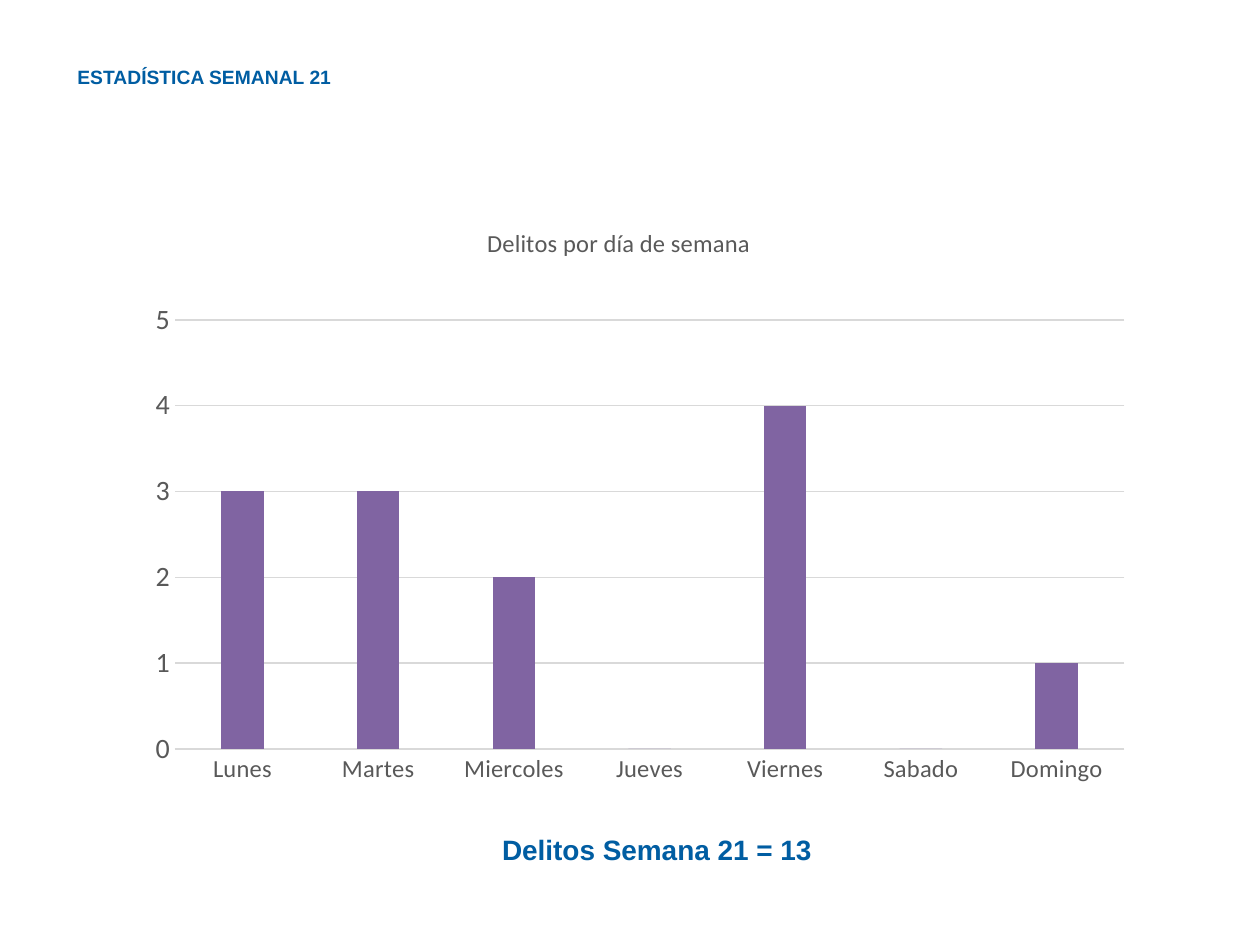
from lxml import etree
from pptx import Presentation
from pptx import util as u
from pptx.chart.data import CategoryChartData
from pptx.dml.color import RGBColor
from pptx.enum import chart as ch, text
from pptx.oxml.ns import qn

BLUE, GREY, RULE = "005DA2", "595959", "D9D9D9"
DAYS = ["Lunes", "Martes", "Miercoles", "Jueves", "Viernes", "Sabado", "Domingo"]
SERIES = [("Series 1", [], "4F81BD"), ("Series 2", [], "C0504D"),
          ("Series 3", [], "9BBB59"),
          ("Series 4", [3, 3, 2, 0, 4, 0, 1], "8064A2")]


def px(n):
    return u.Emu(round(n * 914400 / 126))


def paint(color, code):
    color.rgb = RGBColor.from_string(code)


def style(font, name, size, code, bold=False):
    font.name, font.size, font.bold = name, u.Pt(size), bold
    paint(font.color, code)


def rule(line):
    line.width = u.Pt(0.75)
    paint(line.color, RULE)


def label(slide, box, words, size, align):
    frame = slide.shapes.add_textbox(*map(px, box)).text_frame
    frame.word_wrap = True
    frame.vertical_anchor = text.MSO_ANCHOR.MIDDLE
    par = frame.paragraphs[0]
    par.text, par.alignment = words, align
    style(par.font, "Arial", size, BLUE, True)


def place(parent, index, **parts):
    """Give a chart part a manual layout, in shares of the chart."""
    for old in parent.findall(qn("c:layout")):
        parent.remove(old)
    layout = etree.Element(qn("c:layout"))
    manual = etree.SubElement(layout, qn("c:manualLayout"))
    for tag, val in parts.items():
        etree.SubElement(manual, qn("c:" + tag)).set("val", str(val))
    parent.insert(index, layout)


def columns(slide, box):
    data = CategoryChartData()
    data.categories = DAYS
    for name, vals, _ in SERIES:
        data.add_series(name, vals)
    kind = ch.XL_CHART_TYPE.COLUMN_CLUSTERED
    chart = slide.shapes.add_chart(kind, *map(px, box), data).chart
    style(chart.font, "Calibri", 10, "000000")
    chart.has_legend = False

    # Title
    chart.has_title = True
    title = chart.chart_title
    par = title.text_frame.paragraphs[0]
    par.text = "Delitos por día de semana"
    style(par.font, "Calibri", 14, GREY)
    title.include_in_layout = False
    place(title._element, 1, xMode="edge", yMode="edge", x=0.37, y=0.03)

    # Bars: a series without values takes no room in its group
    plot = chart.plots[0]
    plot.gap_width, plot.overlap, plot.vary_by_categories = 219, -27, False
    for bars, (_, vals, code) in zip(plot.series, SERIES):
        fill = bars.format.fill
        fill.solid()
        paint(fill.fore_color, code)
        if not vals:
            node = bars._element
            node.remove(node.find(qn("c:val")))
    place(chart._chartSpace.chart.plotArea, 0, layoutTarget="inner",
          xMode="edge", yMode="edge", x=0.073, y=0.195, w=0.916, h=0.721)

    # Axes
    days, count = chart.category_axis, chart.value_axis
    for axis, size in ((days, 14), (count, 16)):
        axis.major_tick_mark = axis.minor_tick_mark = ch.XL_TICK_MARK.NONE
        style(axis.tick_labels.font, "Calibri", size, GREY)
    rule(days.format.line)
    count.format.line.fill.background()
    count.minimum_scale, count.maximum_scale, count.major_unit = 0, 5, 1
    count.has_major_gridlines = True
    rule(count.major_gridlines.format.line)


def main():
    deck = Presentation()
    deck.slide_width, deck.slide_height = px(1260), px(945)
    slide = deck.slides.add_slide(deck.slide_layouts[6])
    label(slide, (342, 823, 630, 52), "Delitos Semana 21 = 13", 16,
          text.PP_ALIGN.CENTER)
    label(slide, (65, 58, 665, 37), "ESTADÍSTICA SEMANAL 21", 11,
          text.PP_ALIGN.LEFT)
    columns(slide, (99, 204, 1037, 595))
    deck.save("out.pptx")


if __name__ == "__main__":
    main()
